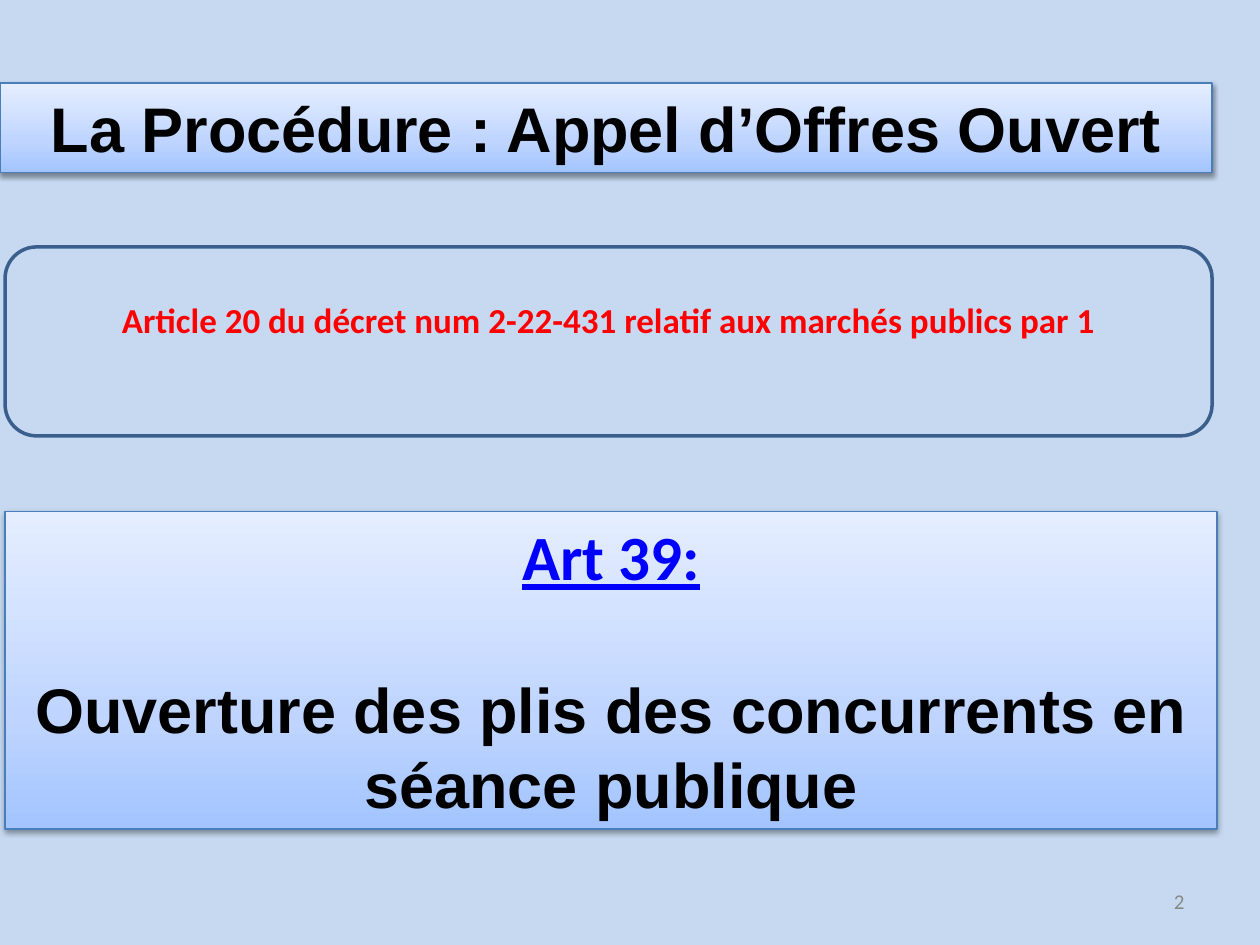
import copy

import lxml.etree
import pptx
import pptx.dml.color
import pptx.enum.shapes
import pptx.enum.text
import pptx.oxml
import pptx.oxml.ns
import pptx.util
from pptx.util import Inches

RGBColor = pptx.dml.color.RGBColor
Align = pptx.enum.text.PP_ALIGN
Anchor = pptx.enum.text.MSO_ANCHOR
Shape = pptx.enum.shapes.MSO_SHAPE

PALE_BLUE = RGBColor(0xC6, 0xD9, 0xF1)
PANEL_STOPS = [
    (0, RGBColor(0xA3, 0xC4, 0xFF)),
    (0.35, RGBColor(0xBF, 0xD5, 0xFF)),
    (1, RGBColor(0xE5, 0xEE, 0xFF)),
]
PANEL_LINE = RGBColor(0x4A, 0x7E, 0xBB)
FRAME_LINE = RGBColor(0x3A, 0x5F, 0x8C)
BLACK = RGBColor(0, 0, 0)
BLUE = RGBColor(0, 0, 0xFF)
RED = RGBColor(0xFF, 0, 0)
GREY = RGBColor(0x89, 0x89, 0x89)

SHADOW = (
    f'<a:effectLst {pptx.oxml.ns.nsdecls("a")}>'
    f'<a:outerShdw blurRad="{pptx.util.Pt(3.1)}" dist="{pptx.util.Pt(1.6)}" dir="5400000" rotWithShape="0">'
    '<a:srgbClr val="000000"><a:alpha val="38000"/></a:srgbClr>'
    '</a:outerShdw></a:effectLst>'
)


def write(paragraph, text, size=36, font="Arial", color=BLACK, bold=True,
          underline=False, align=Align.CENTER, space_before=0):
    paragraph.alignment = align
    paragraph.space_before = pptx.util.Pt(space_before)
    run = paragraph.add_run()
    run.text = text
    run.font.size = pptx.util.Pt(size)
    run.font.name = font
    run.font.bold = bold
    run.font.underline = underline
    run.font.color.rgb = color


def add_panel(left, top, width, height):
    """Add a rectangle with the blue gradient and a soft shadow; return its text frame."""
    panel = slide.shapes.add_shape(
        Shape.RECTANGLE, Inches(left), Inches(top), Inches(width), Inches(height))
    panel.fill.gradient()
    panel.fill.gradient_angle = 90
    stop_list = panel.fill._fill._gradFill.gsLst
    stop_list.insert(1, copy.deepcopy(stop_list[0]))
    for stop, (position, color) in zip(panel.fill.gradient_stops, PANEL_STOPS):
        stop.position = position
        stop.color.rgb = color
    panel.line.color.rgb = PANEL_LINE
    panel.line.width = pptx.util.Pt(0.75)
    panel._element.spPr.append(pptx.oxml.parse_xml(SHADOW))
    panel.text_frame.word_wrap = True
    panel.text_frame.vertical_anchor = Anchor.TOP
    return panel.text_frame


presentation = pptx.Presentation()
presentation.slide_width = Inches(10)
presentation.slide_height = Inches(7.5)
slide = presentation.slides.add_slide(presentation.slide_layouts[6])
slide.background.fill.solid()
slide.background.fill.fore_color.rgb = PALE_BLUE

# Opening of the bids
opening = add_panel(0.04, 4.06, 9.62, 2.52)
write(opening.paragraphs[0], "Art 39:", font="Calibri", color=BLUE, underline=True)
write(opening.add_paragraph(), "Ouverture des plis des concurrents en séance publique",
      space_before=44)

# Title
title = add_panel(0, 0.66, 9.62, 0.71)
write(title.paragraphs[0], "La Procédure : Appel d’Offres Ouvert")

# Slide number
number = slide.shapes.add_textbox(
    Inches(7.17), Inches(6.95), Inches(2.33), Inches(0.4)).text_frame
number.word_wrap = True
number.vertical_anchor = Anchor.MIDDLE
write(number.paragraphs[0], "2", size=12, font="Calibri", color=GREY, bold=False,
      align=Align.RIGHT)

# Legal reference
reference = slide.shapes.add_shape(
    Shape.ROUNDED_RECTANGLE, Inches(0.04), Inches(1.96), Inches(9.58), Inches(1.5))
reference.shadow.inherit = False
reference.fill.solid()
reference.fill.fore_color.rgb = PALE_BLUE
reference.line.color.rgb = FRAME_LINE
reference.line.width = pptx.util.Pt(2)
reference.text_frame.word_wrap = True
reference.text_frame.vertical_anchor = Anchor.MIDDLE
reference.text_frame.margin_bottom = Inches(0.39)
write(reference.text_frame.paragraphs[0],
      "Article 20 du décret num 2-22-431 relatif aux marchés publics par 1",
      size=20, font="Calibri", color=RED)

presentation.save("out.pptx")
